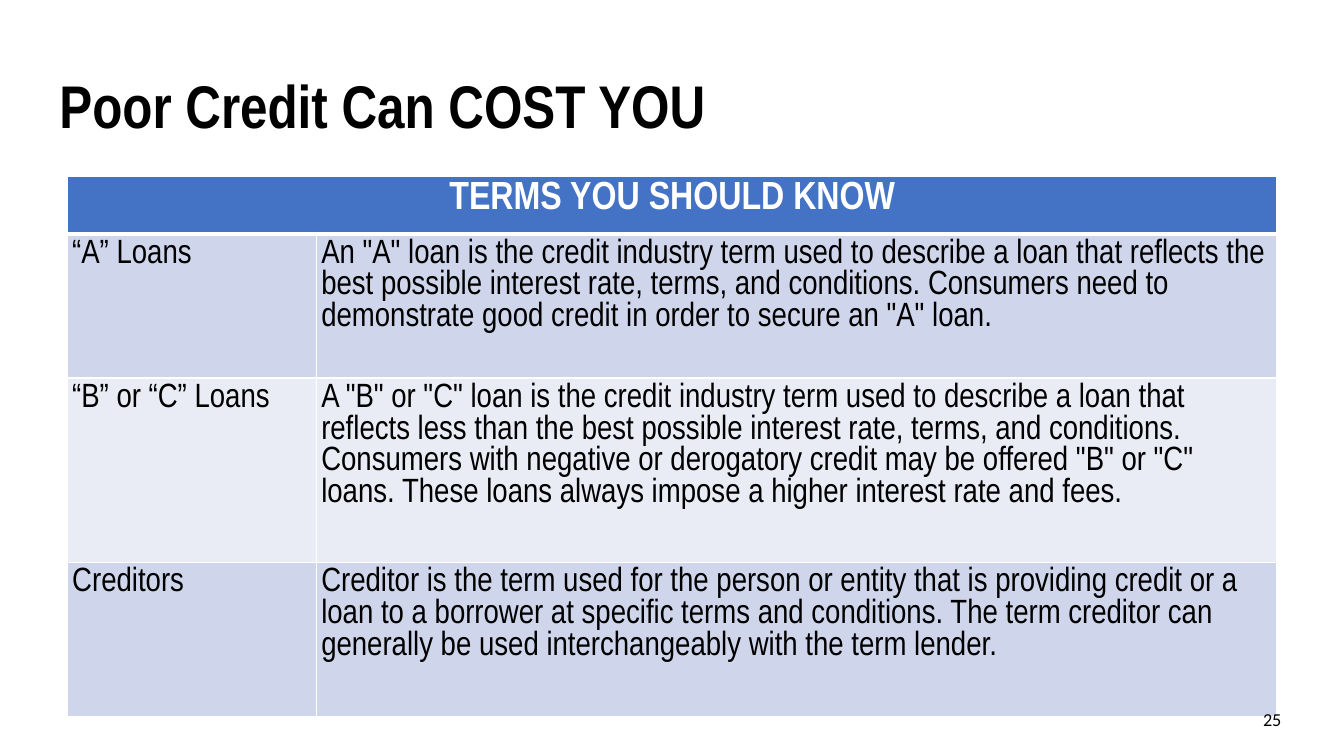
"""Build the slide of credit terms with its title, table and page number."""
from dataclasses import dataclass

from lxml.etree import SubElement
from pptx import Presentation
from pptx.dml.color import RGBColor
from pptx.enum.text import MSO_ANCHOR, MSO_AUTO_SIZE, PP_ALIGN
from pptx.oxml.ns import qn
from pptx.slide import Slide
from pptx.table import _Cell
from pptx.text.text import TextFrame
from pptx.util import Inches, Pt

WIDTH, HEIGHT = Inches(13.33), Inches(7.5)
INSET = Inches(0.05)
BLACK = RGBColor(0x00, 0x00, 0x00)
WHITE = RGBColor(0xFF, 0xFF, 0xFF)
HEADER_BLUE = RGBColor(0x44, 0x72, 0xC4)
BANDS = (RGBColor(0xCF, 0xD5, 0xEA), RGBColor(0xE9, 0xEB, 0xF5))
NARROW, PLAIN = "Arial Narrow", "Calibri"


@dataclass(frozen=True)
class Area:
    """Place on the slide, in percent of its width and height."""
    left: float
    top: float
    width: float
    height: float

    def lengths(self) -> tuple[int, int, int, int]:
        return (int(WIDTH * self.left / 100), int(HEIGHT * self.top / 100),
                int(WIDTH * self.width / 100), int(HEIGHT * self.height / 100))


@dataclass(frozen=True)
class Term:
    name: str
    meaning: str
    row_share: float


TITLE_AREA = Area(4.05, 9.07, 91.45, 10.8)
TABLE_AREA = Area(5, 23.33, 90.02, 71.47)
NUMBER_AREA = Area(92.02, 93.07, 3.7, 4.13)
COLUMN_SHARES = (18.53, 71.49)
HEADER_SHARE = 7.6

TERMS = (
    Term("“A” Loans",
         'An "A" loan is the credit industry term used to describe a loan that '
         'reflects the best possible interest rate, terms, and conditions. '
         'Consumers need to demonstrate good credit in order to secure an "A" loan.',
         19.07),
    Term("“B” or “C” Loans",
         'A "B" or "C" loan is the credit industry term used to describe a loan '
         'that reflects less than the best possible interest rate, terms, and '
         'conditions. Consumers with negative or derogatory credit may be offered '
         '"B" or "C" loans. These loans always impose a higher interest rate and fees.',
         24.4),
    Term("Creditors",
         "Creditor is the term used for the person or entity that is providing "
         "credit or a loan to a borrower at specific terms and conditions. The "
         "term creditor can generally be used interchangeably with the term lender.",
         20.4),
)


def write(frame: TextFrame, text: str, *, size: float, font: str = NARROW,
          color: RGBColor = BLACK, bold: bool = False,
          align: PP_ALIGN = PP_ALIGN.LEFT, spacing: float = 1.0) -> None:
    paragraph = frame.paragraphs[0]
    paragraph.alignment = align
    paragraph.line_spacing = spacing
    run = paragraph.add_run()
    run.text = text
    run.font.name = font
    run.font.size = Pt(size)
    run.font.bold = bold
    run.font.color.rgb = color


def add_box(slide: Slide, area: Area) -> TextFrame:
    frame = slide.shapes.add_textbox(*area.lengths()).text_frame
    frame.word_wrap = True
    frame.auto_size = MSO_AUTO_SIZE.NONE
    frame.vertical_anchor = MSO_ANCHOR.MIDDLE
    frame.margin_left = frame.margin_right = INSET
    frame.margin_top = frame.margin_bottom = INSET
    return frame


def style_cell(cell: _Cell, fill: RGBColor, *, top: float = 1,
               bottom: float = 1) -> None:
    cell.margin_left = cell.margin_right = INSET
    cell.margin_top = cell.margin_bottom = INSET
    properties = cell._tc.get_or_add_tcPr()
    for side, points in (("L", 1), ("R", 1), ("T", top), ("B", bottom)):
        border = SubElement(properties, qn(f"a:ln{side}"), w=str(Pt(points)))
        paint = SubElement(border, qn("a:solidFill"))
        SubElement(paint, qn("a:srgbClr"), val=str(WHITE))
    cell.fill.solid()
    cell.fill.fore_color.rgb = fill


def add_terms(slide: Slide) -> None:
    table = slide.shapes.add_table(
        len(TERMS) + 1, len(COLUMN_SHARES), *TABLE_AREA.lengths()).table
    for column, share in zip(table.columns, COLUMN_SHARES):
        column.width = int(WIDTH * share / 100)
    row_shares = (HEADER_SHARE, *(term.row_share for term in TERMS))
    for row, share in zip(table.rows, row_shares):
        row.height = int(HEIGHT * share / 100)

    header = table.cell(0, 0)
    header.merge(table.cell(0, 1))
    for column in range(len(COLUMN_SHARES)):
        style_cell(table.cell(0, column), HEADER_BLUE, bottom=3)
    write(header.text_frame, "TERMS YOU SHOULD KNOW", size=28, color=WHITE,
          bold=True, align=PP_ALIGN.CENTER)

    for row, term in enumerate(TERMS, start=1):
        for column, text in enumerate((term.name, term.meaning)):
            cell = table.cell(row, column)
            style_cell(cell, BANDS[(row - 1) % 2], top=3 if row == 1 else 1)
            write(cell.text_frame, text, size=24)


def main() -> None:
    deck = Presentation()
    deck.slide_width, deck.slide_height = WIDTH, HEIGHT
    slide = deck.slides.add_slide(deck.slide_layouts[6])
    write(add_box(slide, TITLE_AREA), "Poor Credit Can COST YOU",
          size=43, bold=True, spacing=0.9)
    add_terms(slide)
    write(add_box(slide, NUMBER_AREA), "25", size=13, font=PLAIN,
          align=PP_ALIGN.RIGHT)
    deck.save("out.pptx")


if __name__ == "__main__":
    main()
